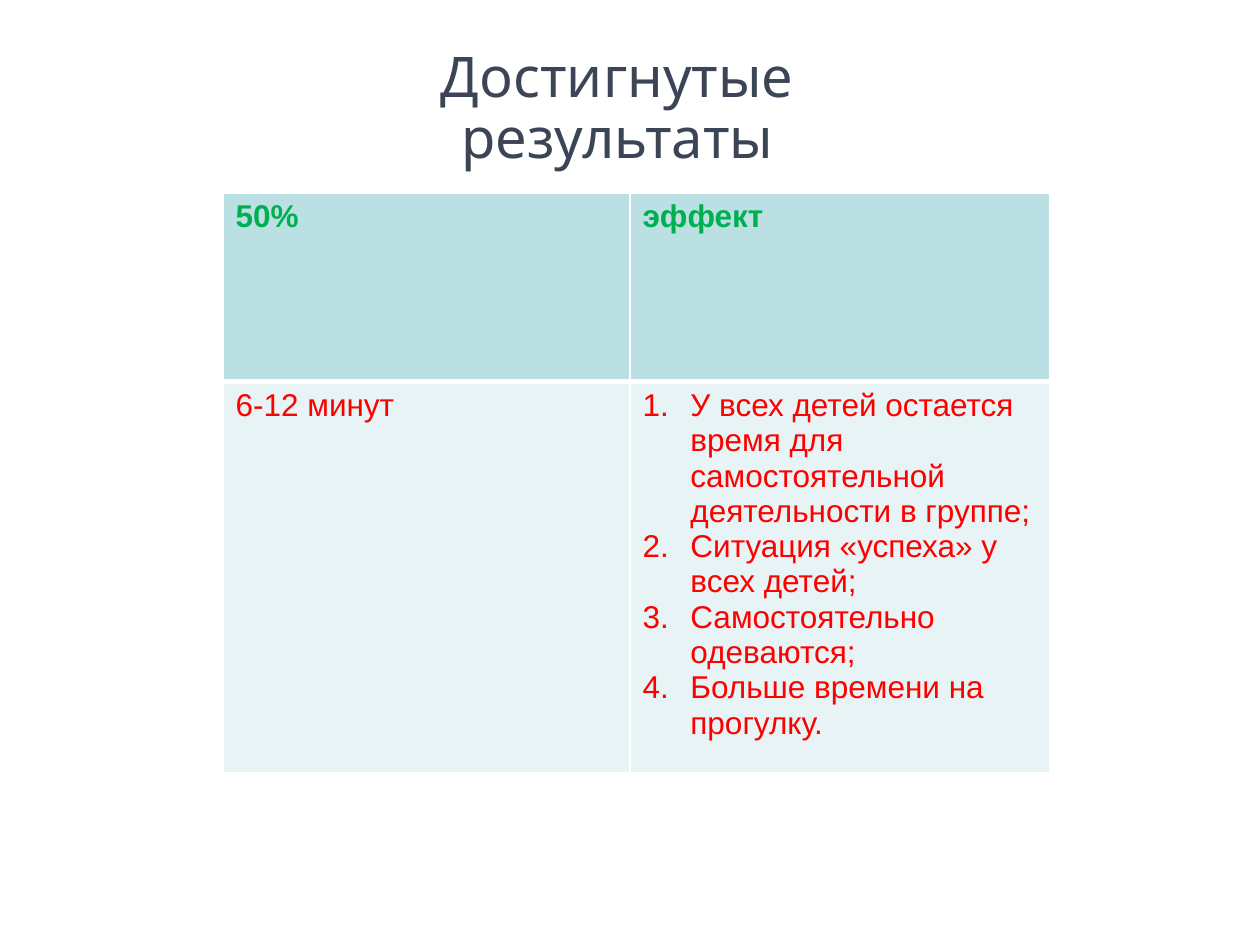
from dataclasses import dataclass

from lxml import etree
from pptx import Presentation
from pptx.dml.color import RGBColor
from pptx.enum.text import MSO_ANCHOR, PP_ALIGN
from pptx.oxml.ns import qn
from pptx.util import Inches, Pt

CENTER, LEFT = PP_ALIGN.CENTER, PP_ALIGN.LEFT
TOP = MSO_ANCHOR.TOP
COLUMN_WIDTHS = (3.23, 3.33)
ROW_HEIGHTS = (1.5, 2.89)
LIST_INDENT = Inches(0.38)


@dataclass(frozen=True)
class RowStyle:
    fill: str
    color: str
    bold: bool
    borders: dict[str, float]


@dataclass(frozen=True)
class CellText:
    lines: tuple[str, ...]
    numbered: bool = False


HEADER = RowStyle("BBE0E3", "00B050", True, {"L": 1, "R": 1, "T": 1, "B": 3})
BODY = RowStyle("E7F3F4", "FF0000", False, {"L": 1, "R": 1, "T": 3, "B": 1})

ROWS = (
    (HEADER, (CellText(("50%",)), CellText(("эффект",)))),
    (BODY, (
        CellText(("6-12 минут",)),
        CellText((
            "У всех детей остается время для самостоятельной деятельности в группе;",
            "Ситуация «успеха» у всех детей;",
            "Самостоятельно одеваются;",
            "Больше времени на прогулку.",
        ), numbered=True),
    )),
)


def rgb(value: str) -> RGBColor:
    return RGBColor.from_string(value)


def add_run(paragraph, text: str, font_name: str, size: float, color: str, bold: bool = False) -> None:
    run = paragraph.add_run()
    run.text = text
    run.font.name = font_name
    run.font.size = Pt(size)
    run.font.bold = bold
    run.font.color.rgb = rgb(color)


def number_paragraph(paragraph) -> None:
    """Give the paragraph a hanging indent and an automatic number."""
    properties = paragraph._p.get_or_add_pPr()
    properties.set("marL", str(LIST_INDENT))
    properties.set("indent", str(-LIST_INDENT))
    etree.SubElement(properties, qn("a:buAutoNum"), type="arabicPeriod")


def set_borders(cell, widths: dict[str, float]) -> None:
    """Draw white borders; call before the fill, which must follow them in the XML."""
    properties = cell._tc.get_or_add_tcPr()
    for side, width in widths.items():
        line = etree.SubElement(properties, qn(f"a:ln{side}"), w=str(Pt(width)))
        fill = etree.SubElement(line, qn("a:solidFill"))
        etree.SubElement(fill, qn("a:srgbClr"), val="FFFFFF")


def fill_cell(cell, content: CellText, style: RowStyle) -> None:
    set_borders(cell, style.borders)
    cell.fill.solid()
    cell.fill.fore_color.rgb = rgb(style.fill)
    cell.vertical_anchor = TOP
    for index, line in enumerate(content.lines):
        paragraph = cell.text_frame.add_paragraph() if index else cell.text_frame.paragraphs[0]
        paragraph.alignment = LEFT
        if content.numbered:
            number_paragraph(paragraph)
        add_run(paragraph, line, "Arial", 18, style.color, style.bold)


def add_title(slide, text: str) -> None:
    frame = slide.shapes.add_textbox(Inches(2.25), Inches(0.29), Inches(5.3), Inches(1.26)).text_frame
    frame.word_wrap = True
    frame.vertical_anchor = TOP
    frame.margin_left = frame.margin_right = frame.margin_top = frame.margin_bottom = Inches(0.1)
    paragraph = frame.paragraphs[0]
    paragraph.alignment = CENTER
    paragraph.line_spacing = 0.9
    add_run(paragraph, text, "Quicksand", 32, "3B4555")


def add_results_table(slide) -> None:
    table = slide.shapes.add_table(
        len(ROW_HEIGHTS), len(COLUMN_WIDTHS), Inches(1.77), Inches(1.53),
        Inches(sum(COLUMN_WIDTHS)), Inches(sum(ROW_HEIGHTS))).table
    table.horz_banding = False
    for column, width in zip(table.columns, COLUMN_WIDTHS):
        column.width = Inches(width)
    for row, height, (style, contents) in zip(table.rows, ROW_HEIGHTS, ROWS):
        row.height = Inches(height)
        for cell, content in zip(row.cells, contents):
            fill_cell(cell, content, style)


def main() -> None:
    presentation = Presentation()
    presentation.slide_width, presentation.slide_height = Inches(10), Inches(7.5)
    slide = presentation.slides.add_slide(presentation.slide_layouts[6])
    add_title(slide, "Достигнутые результаты")
    add_results_table(slide)
    presentation.save("out.pptx")


if __name__ == "__main__":
    main()
